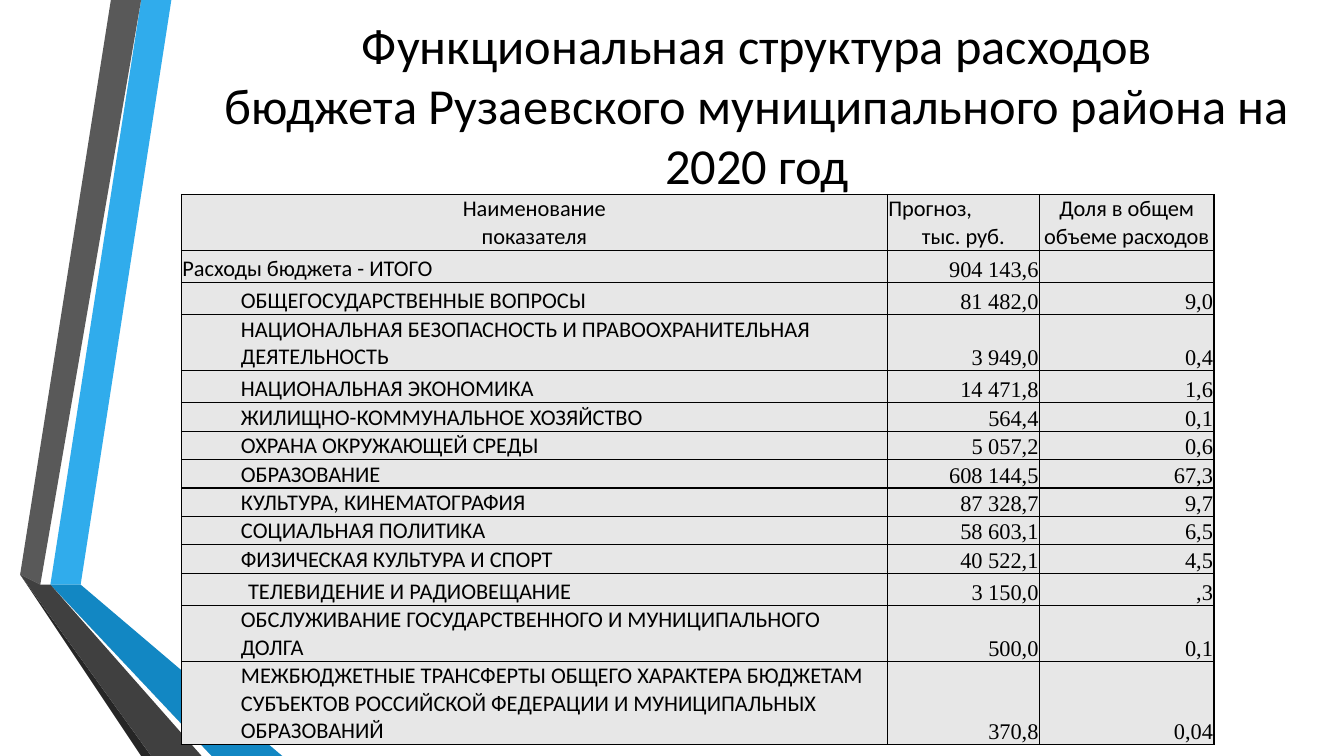
from lxml.etree import SubElement
from pptx import Presentation
from pptx.dml.color import RGBColor
from pptx.enum.text import MSO_ANCHOR as Anchor, MSO_AUTO_SIZE as AutoSize, PP_ALIGN as Align
from pptx.oxml.ns import qn
from pptx.util import Inches, Pt

# Lengths are counted in grid cells of a tenth of an inch
CELL = Inches(0.1)
COLORS = {
    "blue": "30ACEC", "blue_mid": "1287C3", "blue_dark": "0C5A82",
    "grey": "595959", "grey_mid": "404040", "grey_dark": "262626",
    "text": "000000", "cell": "E7E7E7",
}
SANS, SERIF = "Calibri", "Times New Roman"

TITLE = ("Функциональная структура расходов\v"
         "бюджета Рузаевского муниципального района на 2020 год")

# Corner points of the decorative ribbons
RIBBONS = [
    ("blue", [(5, 57.8), (7.7, 58.3), (17.3, 0), (14.5, 0)]),
    ("grey", [(13.9, 0), (11.1, 0), (1.6, 57.3), (4.4, 57.7)]),
    ("grey_dark", [(1.6, 57.3), (14.5, 75), (15.1, 75)]),
    ("blue_dark", [(5, 57.9), (20.8, 75), (21.4, 75)]),
    ("blue_mid", [(5, 57.9), (21.4, 75), (28.3, 75), (7.7, 58.3), (5, 57.8)]),
    ("grey_mid", [(20.2, 75), (4.8, 58.3), (4.3, 57.7), (1.6, 57.3), (15.1, 75)]),
]

COLUMN_WIDTHS = [70, 15.1, 17.3]
HEADER = [
    ("Наименование\vпоказателя", Align.CENTER),
    ("Прогноз,\nтыс. руб.", Align.CENTER),
    ("Доля в общем объеме расходов", Align.CENTER),
]
SINGLE, TALL, DOUBLE, TRIPLE = 2.8, 3.2, 5.5, 8.2

# Row height, indent, name, forecast, share
EXPENSES = [
    (TALL, 0, "Расходы бюджета - ИТОГО", "904 143,6", ""),
    (TALL, 5, "ОБЩЕГОСУДАРСТВЕННЫЕ ВОПРОСЫ", "81 482,0", "9,0"),
    (DOUBLE, 5, "НАЦИОНАЛЬНАЯ БЕЗОПАСНОСТЬ И ПРАВООХРАНИТЕЛЬНАЯ ДЕЯТЕЛЬНОСТЬ",
     "3 949,0", "0,4"),
    (TALL, 5, "НАЦИОНАЛЬНАЯ ЭКОНОМИКА", "14 471,8", "1,6"),
    (SINGLE, 5, "ЖИЛИЩНО-КОММУНАЛЬНОЕ ХОЗЯЙСТВО", "564,4", "0,1"),
    (SINGLE, 5, "ОХРАНА ОКРУЖАЮЩЕЙ СРЕДЫ", "5 057,2", "0,6"),
    (SINGLE, 5, "ОБРАЗОВАНИЕ", "608 144,5", "67,3"),
    (SINGLE, 5, "КУЛЬТУРА, КИНЕМАТОГРАФИЯ", "87 328,7", "9,7"),
    (SINGLE, 5, "СОЦИАЛЬНАЯ ПОЛИТИКА", "58 603,1", "6,5"),
    (SINGLE, 5, "ФИЗИЧЕСКАЯ КУЛЬТУРА И СПОРТ", "40 522,1", "4,5"),
    (TALL, 5.7, "ТЕЛЕВИДЕНИЕ И РАДИОВЕЩАНИЕ", "3 150,0", ",3"),
    (DOUBLE, 5, "ОБСЛУЖИВАНИЕ ГОСУДАРСТВЕННОГО И МУНИЦИПАЛЬНОГО ДОЛГА",
     "500,0", "0,1"),
    (TRIPLE, 5, "МЕЖБЮДЖЕТНЫЕ ТРАНСФЕРТЫ ОБЩЕГО ХАРАКТЕРА БЮДЖЕТАМ СУБЪЕКТОВ "
     "РОССИЙСКОЙ ФЕДЕРАЦИИ И МУНИЦИПАЛЬНЫХ ОБРАЗОВАНИЙ", "370,8", "0,04"),
]


def grid(cells):
    return round(cells * CELL)


def color(name):
    return RGBColor.from_string(COLORS[name])


def write(frame, text, size=16, font=SANS, align=Align.LEFT, indent=0):
    frame.text = text
    for paragraph in frame.paragraphs:
        paragraph.alignment = align
        paragraph.font.size = Pt(size)
        if indent:
            properties = paragraph._p.get_or_add_pPr()
            properties.set("marL", str(grid(indent)))
            properties.set("indent", "0")
        for run in paragraph.runs:
            run.font.size = Pt(size)
            run.font.name = font
            run.font.color.rgb = color("text")


def add_title(slide):
    title = slide.shapes.title
    title.left, title.top, title.width, title.height = map(grid, (18, 1.7, 114.2, 17.3))
    frame = title.text_frame
    frame.auto_size = AutoSize.NONE
    frame.word_wrap = True
    frame.vertical_anchor = Anchor.MIDDLE
    write(frame, TITLE, size=36, align=Align.CENTER)


def add_ribbon(slide, fill, corners):
    outline = slide.shapes.build_freeform(*corners[0], scale=CELL)
    outline.add_line_segments(corners[1:], close=True)
    ribbon = outline.convert_to_shape()
    ribbon.shadow.inherit = False
    ribbon.fill.solid()
    ribbon.fill.fore_color.rgb = color(fill)
    ribbon.line.fill.background()


def style_cell(cell, anchor, left_margin=0.1):
    cell.vertical_anchor = anchor
    cell.margin_left = grid(left_margin)
    cell.margin_right = cell.margin_top = grid(0.1)
    cell.margin_bottom = 0
    # Thin border on all four sides
    properties = cell._tc.get_or_add_tcPr()
    for side in ("a:lnL", "a:lnR", "a:lnT", "a:lnB"):
        border = SubElement(properties, qn(side), w=str(Pt(1)))
        solid = SubElement(border, qn("a:solidFill"))
        SubElement(solid, qn("a:srgbClr"), val=COLORS["text"])
    cell.fill.solid()
    cell.fill.fore_color.rgb = color("cell")


def add_expense_table(slide):
    heights = [DOUBLE] + [expense[0] for expense in EXPENSES]
    table = slide.shapes.add_table(
        len(heights), len(COLUMN_WIDTHS), grid(18), grid(19.3),
        grid(sum(COLUMN_WIDTHS)), grid(sum(heights))).table
    table.first_row = table.horz_banding = False
    for column, width in zip(table.columns, COLUMN_WIDTHS):
        column.width = grid(width)
    for row, height in zip(table.rows, heights):
        row.height = grid(height)

    # Header row
    for column, (heading, align) in enumerate(HEADER):
        cell = table.cell(0, column)
        style_cell(cell, Anchor.MIDDLE)
        write(cell.text_frame, heading, align=align)
    table.cell(0, 1).text_frame.paragraphs[0].alignment = Align.LEFT

    # Expense rows
    for row, (_, indent, name, *figures) in enumerate(EXPENSES, start=1):
        name_cell = table.cell(row, 0)
        style_cell(name_cell, Anchor.BOTTOM, left_margin=0.9 if indent else 0.1)
        write(name_cell.text_frame, name, indent=indent)
        for column, figure in enumerate(figures, start=1):
            cell = table.cell(row, column)
            style_cell(cell, Anchor.BOTTOM)
            write(cell.text_frame, figure, font=SERIF, align=Align.RIGHT)


def main():
    deck = Presentation()
    deck.slide_width, deck.slide_height = Inches(13.33), Inches(7.5)
    slide = deck.slides.add_slide(deck.slide_layouts[5])
    for fill, corners in RIBBONS:
        add_ribbon(slide, fill, corners)
    add_title(slide)
    add_expense_table(slide)
    deck.save("out.pptx")


if __name__ == "__main__":
    main()
